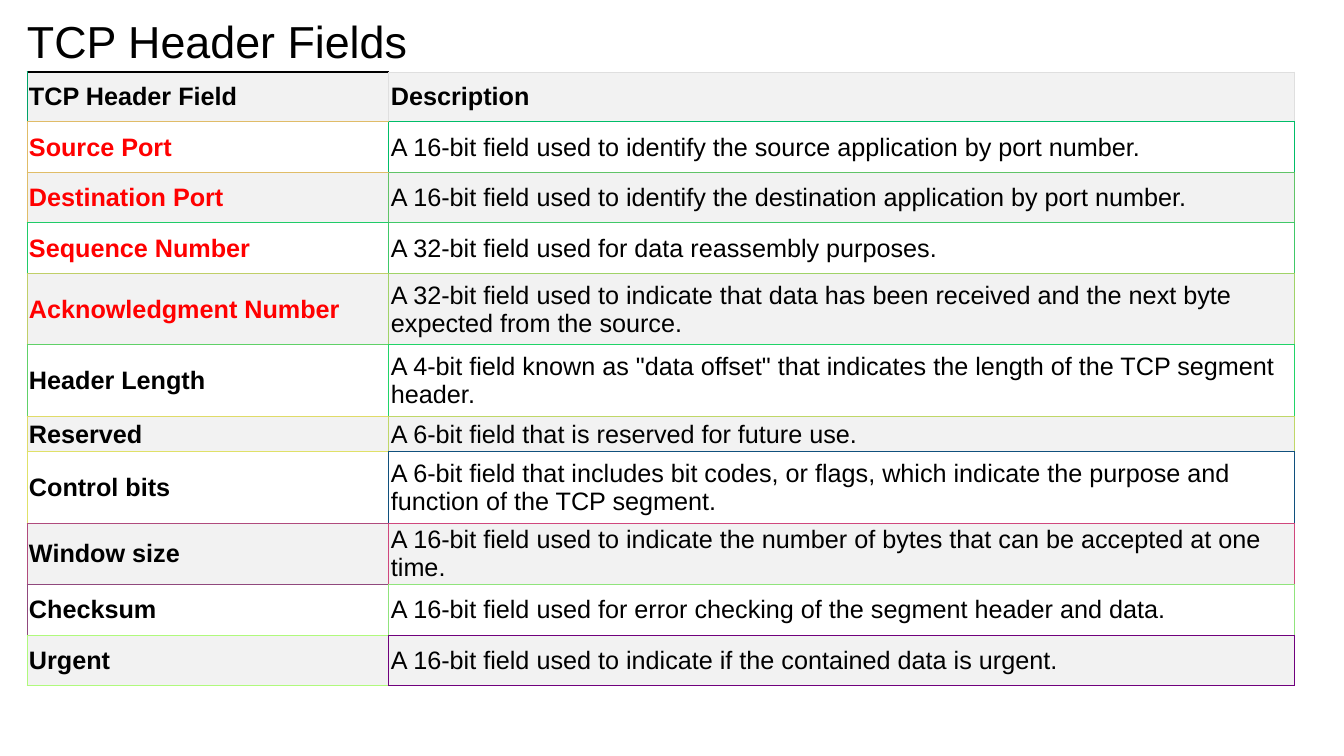
"""Build a slide with a table of TCP header fields."""
from dataclasses import dataclass

from lxml import etree
from pptx import Presentation
from pptx import util as u
from pptx.dml.color import RGBColor
from pptx.enum import text
from pptx.oxml import ns

FONT = "Arial"
COLORS = {"ink": "000000", "key": "FF0000", "band": "F2F2F2", "plain": "FFFFFF"}
TITLE_BOX = (27, 16, 1191, 56)
TABLE_POS = (27, 72)
COL_WIDTHS = (362, 906)
CELL_MARGIN = 2
BORDER_PT, TOP_BORDER_PT = 0.75, 1


@dataclass
class Field:
    name: str
    description: str
    height: int
    edges: tuple[str, str]
    name_color: str = "ink"
    bold_description: bool = False


FIELDS = [
    Field("TCP Header Field", "Description", 50, ("00A268", "DFDFDF"), bold_description=True),
    Field("Source Port", "A 16-bit field used to identify the source application by port number.",
          51, ("E0BC68", "00BD68"), "key"),
    Field("Destination Port",
          "A 16-bit field used to identify the destination application by port number.",
          50, ("E0BD68", "60C468"), "key"),
    Field("Sequence Number", "A 32-bit field used for data reassembly purposes.",
          51, ("20CB68", "40C868"), "key"),
    Field("Acknowledgment Number",
          "A 32-bit field used to indicate that data has been received and the next byte "
          "expected from the source.", 71, ("C0CF68", "A0D368"), "key"),
    Field("Header Length",
          "A 4-bit field known as ʺdata offsetʺ that indicates the length of the TCP segment "
          "header.", 72, ("60D168", "20D468")),
    Field("Reserved", "A 6-bit field that is reserved for future use.",
          35, ("E0DB68", "C0D768")),
    Field("Control bits",
          "A 6-bit field that includes bit codes, or flags, which indicate the purpose and "
          "function of the TCP segment.", 72, ("E0E168", "10507D")),
    Field("Window size",
          "A 16-bit field used to indicate the number of bytes that can be accepted at one time.",
          60, ("B04B7D", "D0477D")),
    Field("Checksum", "A 16-bit field used for error checking of the segment header and data.",
          51, ("90497D", "90E47C")),
    Field("Urgent", "A 16-bit field used to indicate if the contained data is urgent.",
          50, ("B0FA7C", "70007D")),
]


def px(n: int) -> u.Emu:
    return u.Emu(round(n * 914400 / 100.8))


def format_text(p, size: int, color: str, bold: bool = False) -> None:
    for r in p.runs:
        r.font.name, r.font.size, r.font.bold = FONT, u.Pt(size), bold
        r.font.color.rgb = RGBColor.from_string(COLORS[color])


def set_borders(cell, borders: dict[str, tuple[str, float]]) -> None:
    tc_pr = cell._tc.get_or_add_tcPr()
    for i, (side, (color, width)) in enumerate(borders.items()):
        ln = etree.Element(ns.qn(f"a:ln{side}"), w=str(u.Pt(width)))
        fill = etree.SubElement(ln, ns.qn("a:solidFill"))
        etree.SubElement(fill, ns.qn("a:srgbClr"), val=color)
        tc_pr.insert(i, ln)


def cell_borders(row: int, col: int) -> dict[str, tuple[str, float]]:
    own = FIELDS[row].edges[col]
    right = FIELDS[row].edges[-1]
    below = FIELDS[min(row + 1, len(FIELDS) - 1)].edges[col]
    top = (COLORS["ink"], TOP_BORDER_PT) if row == col == 0 else (own, BORDER_PT)
    return {"L": (own, BORDER_PT), "R": (right, BORDER_PT), "T": top, "B": (below, BORDER_PT)}


def add_title(s, title: str) -> None:
    sp = s.shapes.title
    sp.left, sp.top, sp.width, sp.height = map(px, TITLE_BOX)
    tf = sp.text_frame
    tf.text = title
    tf.word_wrap, tf.auto_size = True, text.MSO_AUTO_SIZE.NONE
    tf.vertical_anchor = text.MSO_ANCHOR.MIDDLE
    tf.margin_left, tf.margin_right = 0, px(10)
    tf.margin_top = tf.margin_bottom = px(5)
    p = tf.paragraphs[0]
    p.alignment, p.line_spacing = text.PP_ALIGN.LEFT, 0.9
    format_text(p, 32, "ink")


def add_field_table(s) -> None:
    size = sum(COL_WIDTHS), sum(f.height for f in FIELDS)
    frame = s.shapes.add_table(len(FIELDS), len(COL_WIDTHS), *map(px, TABLE_POS + size))
    table = frame.table
    table.first_row = table.horz_banding = False
    for column, width in zip(table.columns, COL_WIDTHS):
        column.width = px(width)
    for row, f in enumerate(FIELDS):
        table.rows[row].height = px(f.height)
        contents = ((f.name, f.name_color, True), (f.description, "ink", f.bold_description))
        for col, (words, color, bold) in enumerate(contents):
            cell = table.cell(row, col)
            cell.text = words
            cell.vertical_anchor = text.MSO_ANCHOR.MIDDLE
            cell.margin_left = cell.margin_right = px(CELL_MARGIN)
            cell.margin_top = cell.margin_bottom = px(CELL_MARGIN)
            cell.fill.solid()
            cell.fill.fore_color.rgb = RGBColor.from_string(COLORS["plain" if row % 2 else "band"])
            set_borders(cell, cell_borders(row, col))
            format_text(cell.text_frame.paragraphs[0], 18, color, bold)


def main() -> None:
    prs = Presentation()
    prs.slide_width, prs.slide_height = px(1344), px(756)
    s = prs.slides.add_slide(prs.slide_layouts[5])
    add_title(s, "TCP Header Fields")
    add_field_table(s)
    prs.save("out.pptx")


if __name__ == "__main__":
    main()
